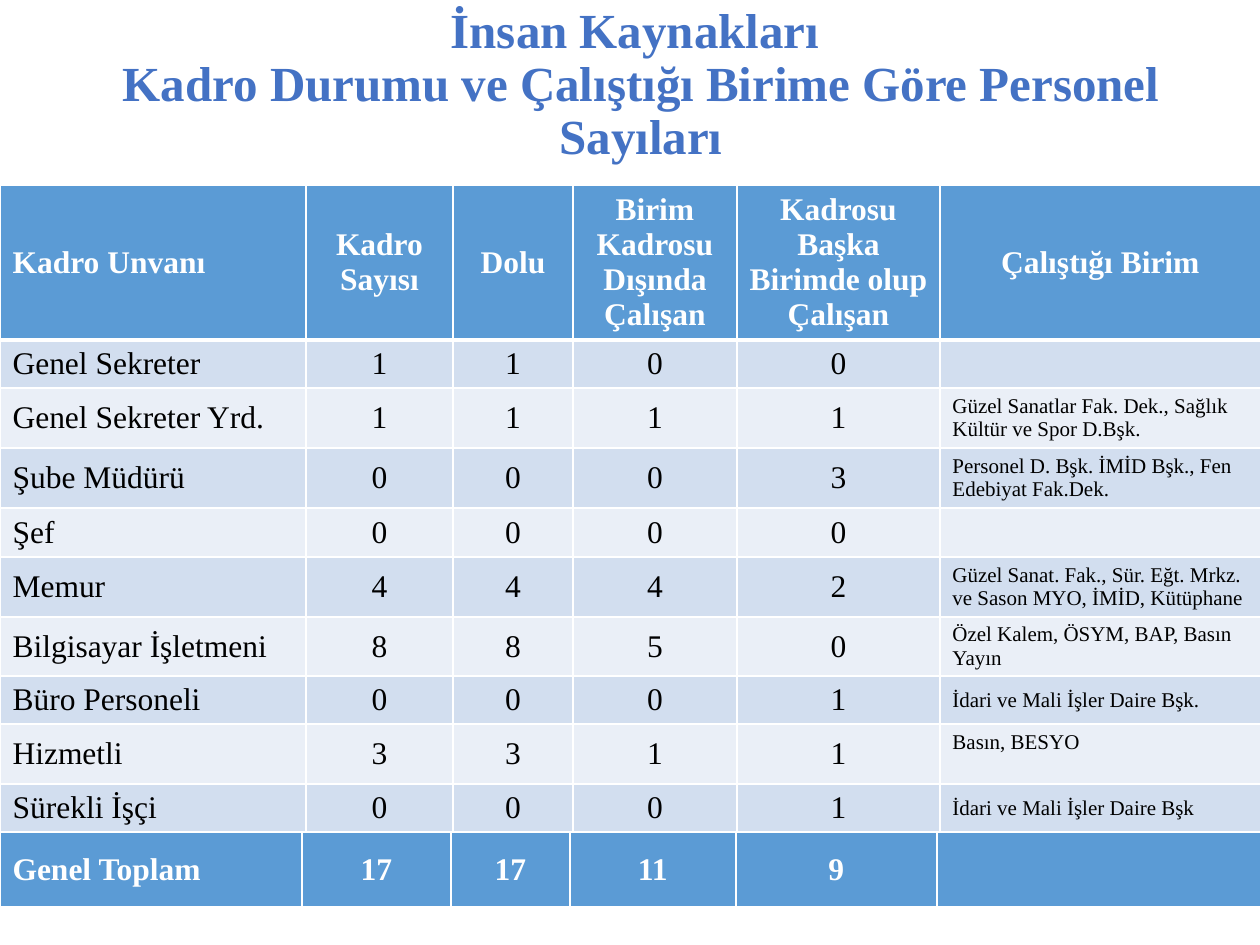
from lxml import etree
from pptx import Presentation
from pptx import util as u
from pptx.dml.color import RGBColor
from pptx.enum import text
from pptx.oxml import ns

PX = 914400 // 126
COLORS = {
    "title": "4472C4", "header": "5B9BD5", "band": "D2DEEF", "plain": "EAEFF7",
    "light": "FFFFFF", "dark": "000000",
}


class StaffSlide:
    """Holds the style and the current slide."""

    font = "Times New Roman"

    def __init__(self, prs):
        self.slide = prs.slides.add_slide(prs.slide_layouts[5])

    def style(self, paragraph, size, color, bold=False, centered=False):
        paragraph.alignment = text.PP_ALIGN.CENTER if centered else text.PP_ALIGN.LEFT
        font = paragraph.font
        font.name, font.size, font.bold = self.font, u.Pt(size), bold
        font.color.rgb = RGBColor.from_string(COLORS[color])

    def title(self, wording, left, top, width, height):
        title = self.slide.shapes.title
        title.left, title.top, title.width, title.height = (
            n * PX for n in (left, top, width, height))
        frame = title.text_frame
        frame.text = wording
        frame.word_wrap = True
        frame.auto_size = text.MSO_AUTO_SIZE.NONE
        frame.vertical_anchor = text.MSO_ANCHOR.MIDDLE
        paragraph = frame.paragraphs[0]
        paragraph.line_spacing = 0.9
        self.style(paragraph, 28, "title", bold=True, centered=True)

    def borders(self, cell, bottom):
        properties = cell._tc.get_or_add_tcPr()
        widths = {"lnL": 1, "lnR": 1, "lnT": 1, "lnB": bottom}
        for place, (side, points) in enumerate(widths.items()):
            line = etree.Element(ns.qn(f"a:{side}"), w=str(u.Pt(points)))
            fill = etree.SubElement(line, ns.qn("a:solidFill"))
            etree.SubElement(fill, ns.qn("a:srgbClr"), val=COLORS["light"])
            properties.insert(place, line)

    def cell(self, cell, wording, fill, size, centered, strong):
        cell.text = wording
        cell.vertical_anchor = text.MSO_ANCHOR.MIDDLE
        cell.fill.solid()
        cell.fill.fore_color.rgb = RGBColor.from_string(COLORS[fill])
        color = "light" if strong else "dark"
        self.style(cell.text_frame.paragraphs[0], size, color, strong, centered)
        self.borders(cell, bottom=3 if strong else 1)

    def table(self, rows, top, widths, heights):
        frame = self.slide.shapes.add_table(
            len(rows), len(widths), 0, top * PX, sum(widths) * PX, sum(heights) * PX)
        table = frame.table
        for column, width in zip(table.columns, widths):
            column.width = width * PX
        for r, (row, height) in enumerate(zip(rows, heights)):
            table.rows[r].height = height * PX
            header = r == 0
            fill = "header" if header else "band" if r % 2 else "plain"
            for c, wording in enumerate(row):
                unit = c == len(widths) - 1
                self.cell(table.cell(r, c), wording, fill,
                          size=12 if unit and not header else 18,
                          centered=c > 0 and (header or not unit), strong=header)
        return table


STAFF = [
    ("Kadro Unvanı", "Kadro Sayısı", "Dolu", "Birim Kadrosu Dışında Çalışan",
     "Kadrosu Başka Birimde olup Çalışan", "Çalıştığı Birim"),
    ("Genel Sekreter", "1", "1", "0", "0", ""),
    ("Genel Sekreter Yrd.", "1", "1", "1", "1",
     "Güzel Sanatlar Fak. Dek., Sağlık Kültür ve Spor D.Bşk."),
    ("Şube Müdürü", "0", "0", "0", "3",
     "Personel D. Bşk. İMİD Bşk., Fen Edebiyat Fak.Dek."),
    ("Şef", "0", "0", "0", "0", ""),
    ("Memur", "4", "4", "4", "2",
     "Güzel Sanat. Fak., Sür. Eğt. Mrkz. ve Sason MYO, İMİD, Kütüphane"),
    ("Bilgisayar İşletmeni", "8", "8", "5", "0", "Özel Kalem, ÖSYM, BAP, Basın Yayın"),
    ("Büro Personeli", "0", "0", "0", "1", "İdari ve Mali İşler Daire Bşk."),
    ("Hizmetli", "3", "3", "1", "1", "Basın, BESYO"),
    ("Sürekli İşçi", "0", "0", "0", "1", "İdari ve Mali İşler Daire Bşk"),
]
TOTAL = [("Genel Toplam", "17", "17", "11", "9", "")]


def main():
    prs = Presentation()
    prs.slide_width, prs.slide_height = u.Inches(10), u.Inches(7.5)
    page = StaffSlide(prs)

    # Heading
    page.title("İnsan Kaynakları \vKadro Durumu ve Çalıştığı Birime Göre Personel Sayıları",
               74, 66, 1134, 39)

    # Staff by post
    staff = page.table(STAFF, 185, widths=(306, 147, 120, 164, 203, 321),
                       heights=(155, 48, 60, 60, 49, 60, 59, 48, 60, 48))
    staff.cell(8, 5).vertical_anchor = text.MSO_ANCHOR.TOP

    # Grand total
    page.table(TOTAL, 832, widths=(302, 149, 119, 166, 201, 324), heights=(76,))

    prs.save("out.pptx")


if __name__ == "__main__":
    main()
